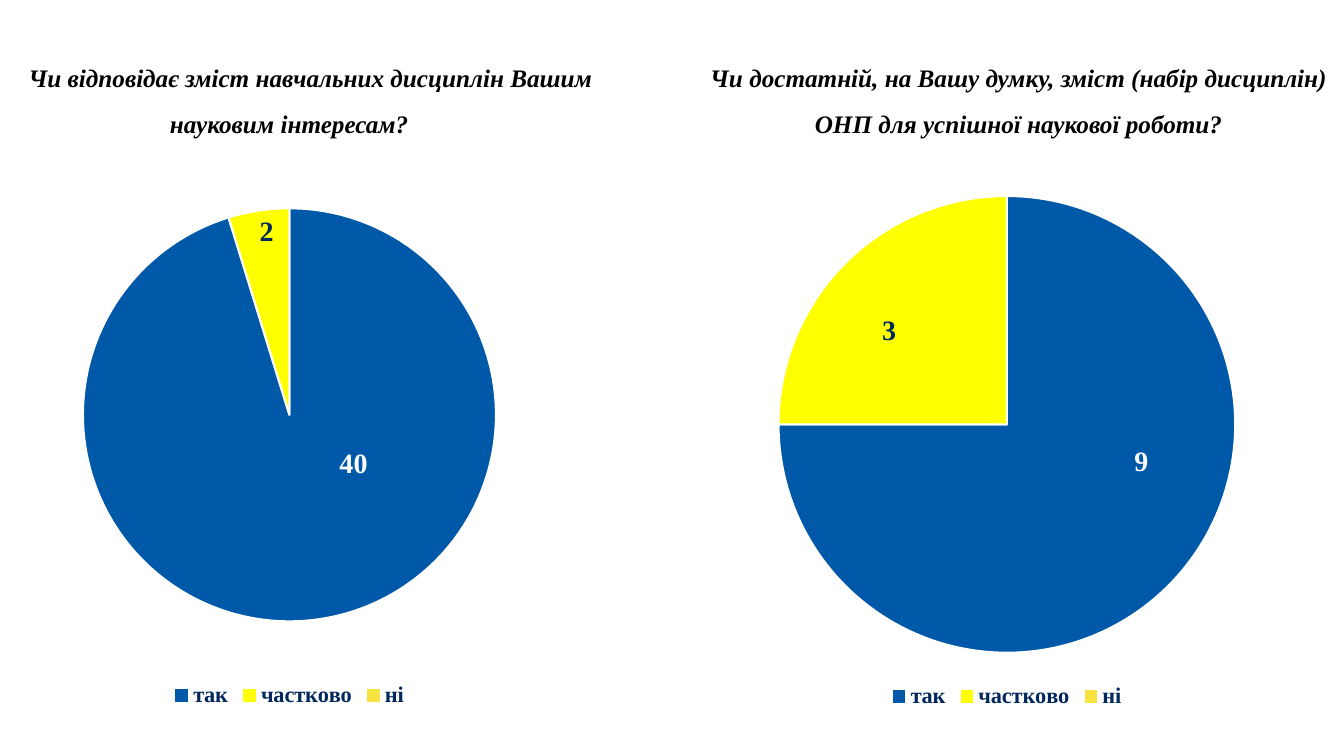
"""Build a slide with two survey questions, each above a pie chart of its answers."""
from dataclasses import dataclass

import lxml.etree
import pptx
import pptx.chart.data
import pptx.dml.color
import pptx.enum.chart
import pptx.enum.text
import pptx.oxml
import pptx.oxml.ns
import pptx.util
from pptx.util import Cm, Pt

BLUE = pptx.dml.color.RGBColor(0x00, 0x58, 0xA8)
YELLOW = pptx.dml.color.RGBColor(0xFF, 0xFF, 0x00)
GOLD = pptx.dml.color.RGBColor(0xF6, 0xE3, 0x42)
NAVY = pptx.dml.color.RGBColor(0x01, 0x28, 0x5C)
WHITE = pptx.dml.color.RGBColor(0xFF, 0xFF, 0xFF)
BLACK = pptx.dml.color.RGBColor(0x00, 0x00, 0x00)

FONT = "Times New Roman"
ANSWERS = ("так", "частково", "ні")
SLICE_COLORS = (BLUE, YELLOW, GOLD)
LABEL_COLORS = (WHITE, NAVY)
CHART_WIDTH = 16.97
LabelPosition = pptx.enum.chart.XL_LABEL_POSITION


@dataclass(frozen=True)
class Frame:
    """Position and size in centimetres."""

    left: float
    top: float
    width: float
    height: float

    def lengths(self) -> tuple:
        """Return the four values as lengths."""
        return Cm(self.left), Cm(self.top), Cm(self.width), Cm(self.height)


@dataclass(frozen=True)
class Survey:
    """One question with its answers; label shifts move a label from its slice centre."""

    question: str
    question_frame: Frame
    first_indent: float
    counts: tuple
    chart_frame: Frame
    pie_top: float
    pie_diameter: float
    label_shifts: tuple


SURVEYS = (
    Survey("Чи відповідає зміст навчальних дисциплін Вашим науковим інтересам?",
           Frame(-1.17, 1.07, 16.92, 2.44), 1.07, (40, 2, None),
           Frame(-1.19, 4.88, CHART_WIDTH, 13.08), 0.37, 10.41,
           ((1.23, -1.34), None)),
    Survey("Чи достатній, на Вашу думку, зміст (набір дисциплін) ОНП для успішної наукової роботи?",
           Frame(17.48, 1.07, 16.38, 2.44), 0, (9, 3, None),
           Frame(16.89, 4.47, CHART_WIDTH, 13.51), 0.47, 11.51,
           ((1.36, -1.08), (-0.93, -0.33))),
)


def format_font(font, *, size: float, color, name: str = FONT,
                bold: bool = True, italic: bool = False) -> None:
    """Set the look of a font."""
    font.name, font.size, font.bold, font.italic = name, Pt(size), bold, italic
    font.color.rgb = color


def add_text(page, text: str, frame: Frame, *, first_indent: float = 0, **font_format) -> None:
    """Add a centred, wrapped text box."""
    box = page.shapes.add_textbox(*frame.lengths())
    box.text_frame.word_wrap = True
    para = box.text_frame.paragraphs[0]
    para.alignment = pptx.enum.text.PP_ALIGN.CENTER
    para.line_spacing = 1.5
    para.space_after = Pt(8)
    if first_indent:
        properties = para._p.get_or_add_pPr()
        properties.set("marL", "0")
        properties.set("indent", str(Cm(first_indent)))
    span = para.add_run()
    span.text = text
    format_font(span.font, **font_format)


def manual_layout(**settings):
    """Return a chart layout element with the given settings."""
    layout = pptx.oxml.parse_xml(f"<c:layout {pptx.oxml.ns.nsdecls('c')}><c:manualLayout/></c:layout>")
    for name, value in settings.items():
        lxml.etree.SubElement(layout[0], pptx.oxml.ns.qn(f"c:{name}")).set("val", str(value))
    return layout


def place_pie(chart, survey: Survey) -> None:
    """Fix the pie's place inside its chart."""
    width = round(survey.pie_diameter / survey.chart_frame.width, 4)
    height = round(survey.pie_diameter / survey.chart_frame.height, 4)
    plot_area = chart._chartSpace.xpath("c:chart/c:plotArea")[0]
    for old_layout in plot_area.xpath("c:layout"):
        plot_area.remove(old_layout)
    plot_area.insert(0, manual_layout(
        layoutTarget="inner", xMode="edge", yMode="edge", x=round((1 - width) / 2, 4),
        y=round(survey.pie_top / survey.chart_frame.height, 4), w=width, h=height))


def format_labels(series, survey: Survey) -> None:
    """Show the values on the slices, each in its colour and place."""
    labels = series.data_labels
    labels.show_value = True
    format_font(labels.font, size=20, color=NAVY)
    for leader in series._element.xpath("c:dLbls/c:showLeaderLines"):
        leader.set("val", "0")
    for index, (color, shift) in enumerate(zip(LABEL_COLORS, survey.label_shifts)):
        label = series.points[index].data_label
        format_font(label.font, size=20, color=color)
        label.position = LabelPosition.CENTER if shift else LabelPosition.INSIDE_END
        if shift:
            element = series._element.xpath(f"c:dLbls/c:dLbl[c:idx/@val='{index}']")[0]
            element.insert(1, manual_layout(
                x=round(shift[0] / survey.chart_frame.width, 4),
                y=round(shift[1] / survey.chart_frame.height, 4)))


def add_pie(page, survey: Survey) -> None:
    """Add the pie chart of a survey."""
    chart_data = pptx.chart.data.CategoryChartData()
    chart_data.categories = ANSWERS
    chart_data.add_series("Series 1", survey.counts)
    chart = page.shapes.add_chart(pptx.enum.chart.XL_CHART_TYPE.PIE,
                                  *survey.chart_frame.lengths(), chart_data).chart
    chart.has_title = False
    format_font(chart.font, size=10, color=NAVY, name="Arial", bold=False)
    chart.has_legend = True
    chart.legend.position = pptx.enum.chart.XL_LEGEND_POSITION.BOTTOM
    chart.legend.include_in_layout = False
    format_font(chart.legend.font, size=16, color=NAVY)
    chart.plots[0].vary_by_categories = True
    series = chart.plots[0].series[0]
    for index, color in enumerate(SLICE_COLORS):
        piece = series.points[index].format
        piece.fill.solid()
        piece.fill.fore_color.rgb = color
        piece.line.color.rgb = WHITE
        piece.line.width = Pt(1.5)
    format_labels(series, survey)
    place_pie(chart, survey)


def main() -> None:
    """Build and save the deck."""
    deck = pptx.Presentation()
    deck.slide_width, deck.slide_height = Cm(33.87), Cm(19.05)
    page = deck.slides.add_slide(deck.slide_layouts[6])
    for survey in SURVEYS:
        add_text(page, survey.question, survey.question_frame, first_indent=survey.first_indent,
                 size=18, color=BLACK, italic=True)
        add_pie(page, survey)
    deck.save("out.pptx")


if __name__ == "__main__":
    main()
